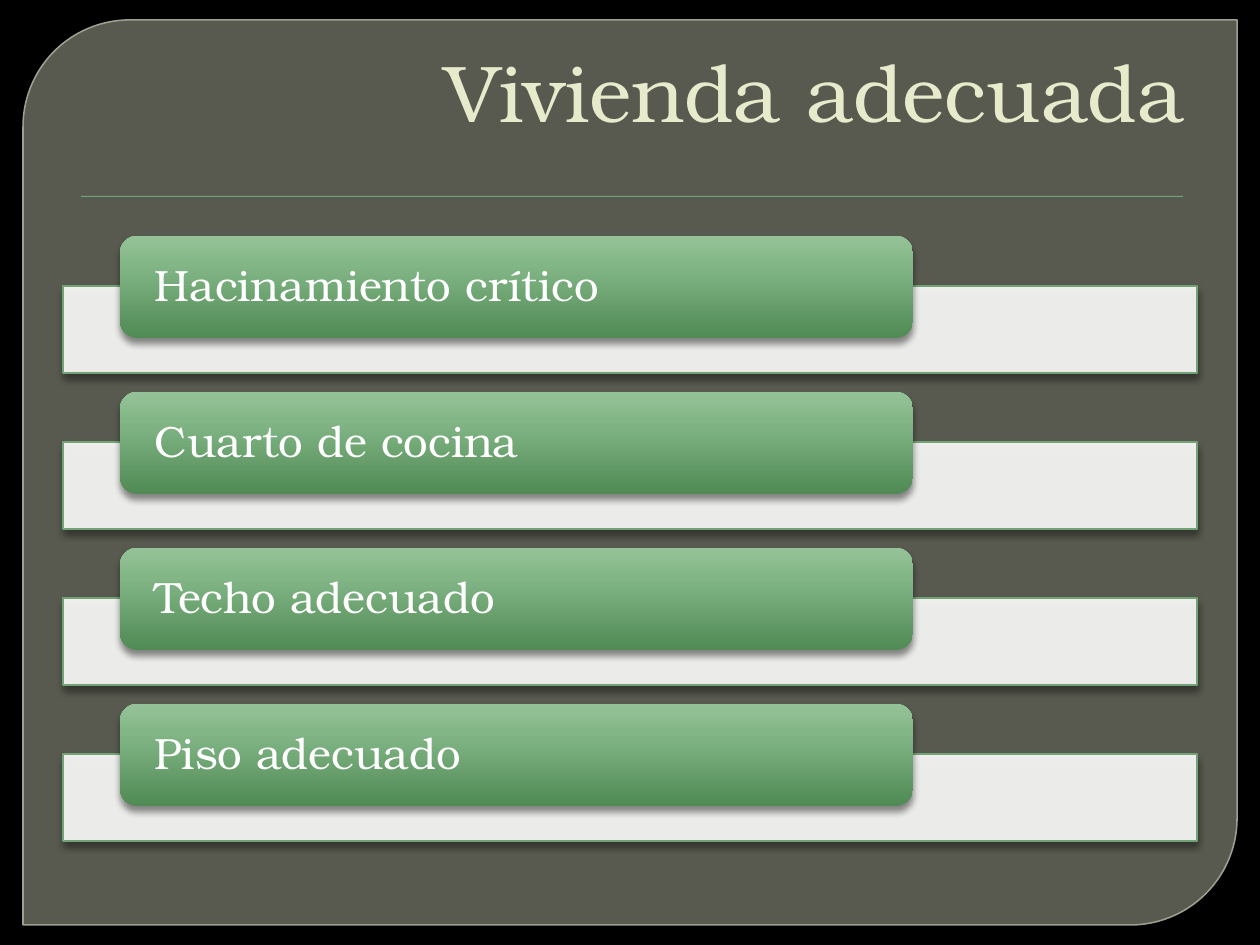
import pptx
import pptx.dml.color
import pptx.enum.shapes
import pptx.enum.text
import pptx.oxml
import pptx.oxml.ns
import pptx.util
import lxml.etree

EMU_PER_PX = 914400 / 126
FONT = "TeX Gyre Bonum"
KINDS = pptx.enum.shapes.MSO_SHAPE
ALIGN = pptx.enum.text.PP_ALIGN
ANCHOR = pptx.enum.text.MSO_ANCHOR
NS = pptx.oxml.ns.nsdecls("a")


def px(*lengths):
    return [pptx.util.Emu(round(n * EMU_PER_PX)) for n in lengths]


def color(hex_code):
    return pptx.dml.color.RGBColor.from_string(hex_code)


deck = pptx.Presentation()
deck.slide_width, deck.slide_height = px(1260, 945)
slide = deck.slides.add_slide(deck.slide_layouts[6])
slide.background.fill.solid()
slide.background.fill.fore_color.rgb = color("000000")

# Shapes from back to front: (kind, box, fill, fill alpha %, line, line width, shadow)
# A shadow is alpha %, blur and distance in points, falling straight down.
ROW_PITCH = 156
topics = ["Hacinamiento crítico", "Cuarto de cocina", "Techo adecuado", "Piso adecuado"]
soft_shadow = (43, 4, 3)
parts = [
    (KINDS.ROUND_2_DIAG_RECTANGLE, (23, 20, 1214, 905), "888B7B", 65, "9DA090", 0.87, None),
    (KINDS.RECTANGLE, (81, 196, 1102, 1), "72A376", 100, None, 0, (75, 1, 1)),
]
for row in range(len(topics)):
    drop = row * ROW_PITCH
    parts += [
        (KINDS.RECTANGLE, (63, 286 + drop, 1134, 87), "FFFFFF", 90, "72A376", 0.75, soft_shadow),
        (KINDS.ROUNDED_RECTANGLE, (120, 236 + drop, 793, 102), None, 100, None, 0, soft_shadow),
    ]

pills = []
for kind, box, fill, alpha, line, line_width, shadow in parts:
    part = slide.shapes.add_shape(kind, *px(*box))
    part.shadow.inherit = False
    if kind == KINDS.ROUND_2_DIAG_RECTANGLE:
        part.adjustments[0] = 0.118
    if fill:
        part.fill.solid()
        part.fill.fore_color.rgb = color(fill)
        fill_color = part.fill._xPr.find(".//" + pptx.oxml.ns.qn("a:srgbClr"))
        lxml.etree.SubElement(fill_color, pptx.oxml.ns.qn("a:alpha"), val=str(alpha * 1000))
    else:
        pills.append(part)
        stops = "".join(
            f'<a:gs pos="{pos * 1000}"><a:srgbClr val="{stop}"/></a:gs>'
            for pos, stop in [(0, "508A55"), (72, "83B687"), (100, "94C298")])
        gradient = pptx.oxml.parse_xml(
            f'<a:gradFill {NS} rotWithShape="1"><a:gsLst>{stops}</a:gsLst>'
            '<a:lin ang="16200000" scaled="0"/></a:gradFill>')
        part._element.spPr.find(pptx.oxml.ns.qn("a:prstGeom")).addnext(gradient)
    if line:
        part.line.color.rgb = color(line)
        part.line.width = pptx.util.Pt(line_width)
    else:
        part.line.fill.background()
    if shadow:
        shadow_alpha, blur, distance = shadow
        effects = part._element.spPr.find(pptx.oxml.ns.qn("a:effectLst"))
        effects.append(pptx.oxml.parse_xml(
            f'<a:outerShdw {NS} blurRad="{blur * 12700}" dist="{distance * 12700}" '
            f'dir="5400000" rotWithShape="0"><a:srgbClr val="000000">'
            f'<a:alpha val="{shadow_alpha * 1000}"/></a:srgbClr></a:outerShdw>'))

heading = slide.shapes.add_textbox(*px(63, 35, 1134, 110))
side, none = px(30, 0)
heading_frame = {"word_wrap": True, "vertical_anchor": ANCHOR.BOTTOM}
pill_frame = {"word_wrap": True, "vertical_anchor": ANCHOR.MIDDLE, "margin_left": side,
              "margin_right": side, "margin_top": none, "margin_bottom": none}
heading_style = (heading_frame, {"alignment": ALIGN.RIGHT}, 46, "E7EACB")
pill_style = (pill_frame, {"alignment": ALIGN.LEFT, "line_spacing": 0.9}, 25, "FFFFFF")

labels = [(heading, "Vivienda adecuada", heading_style)]
labels += [(pill, topic, pill_style) for pill, topic in zip(pills, topics)]
for holder, wording, (frame_format, paragraph_format, size, text_color) in labels:
    frame = holder.text_frame
    for key, value in frame_format.items():
        setattr(frame, key, value)
    paragraph = frame.paragraphs[0]
    for key, value in paragraph_format.items():
        setattr(paragraph, key, value)
    run = paragraph.add_run()
    run.text = wording
    run.font.name = FONT
    run.font.size = pptx.util.Pt(size)
    run.font.color.rgb = color(text_color)

deck.save("out.pptx")
